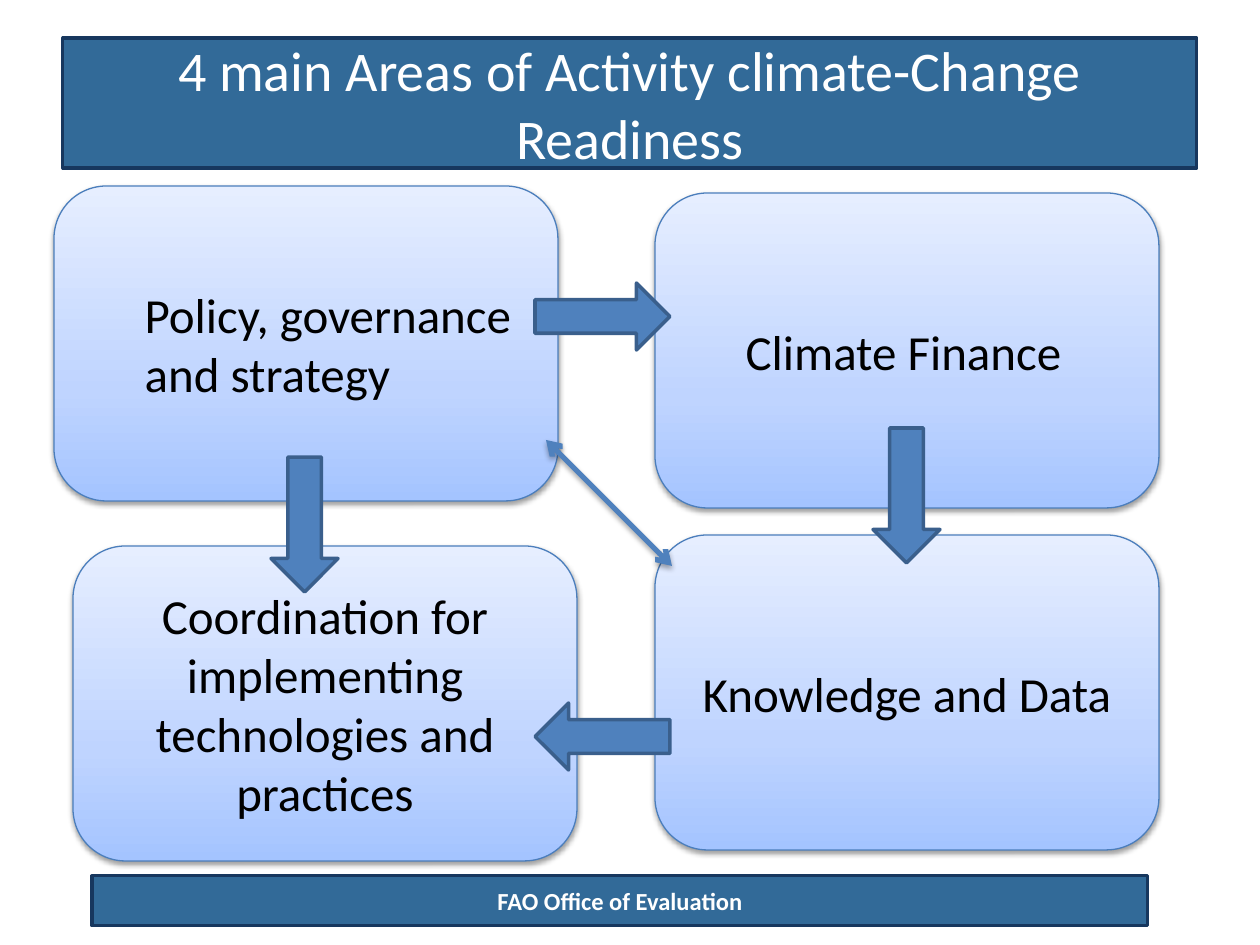
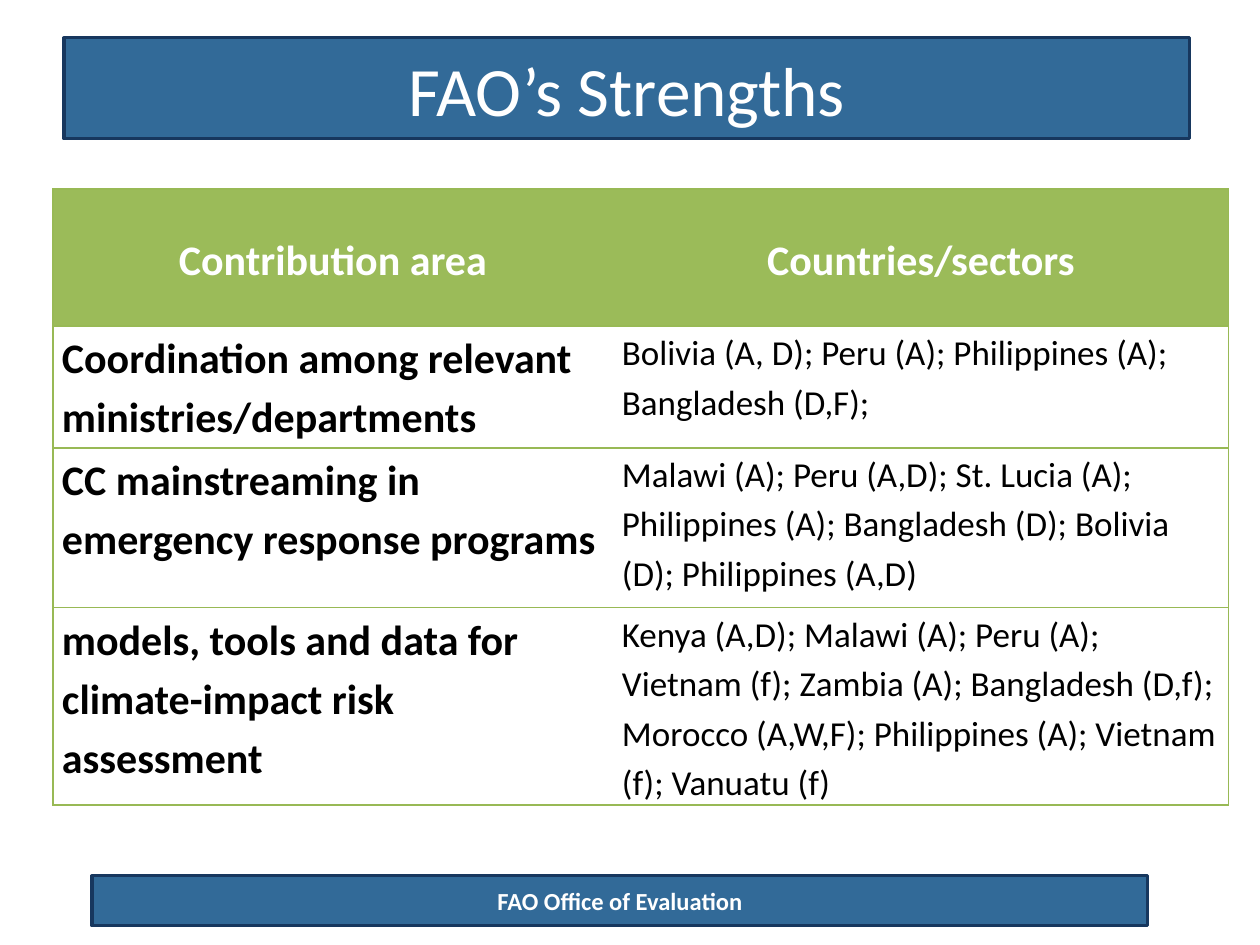
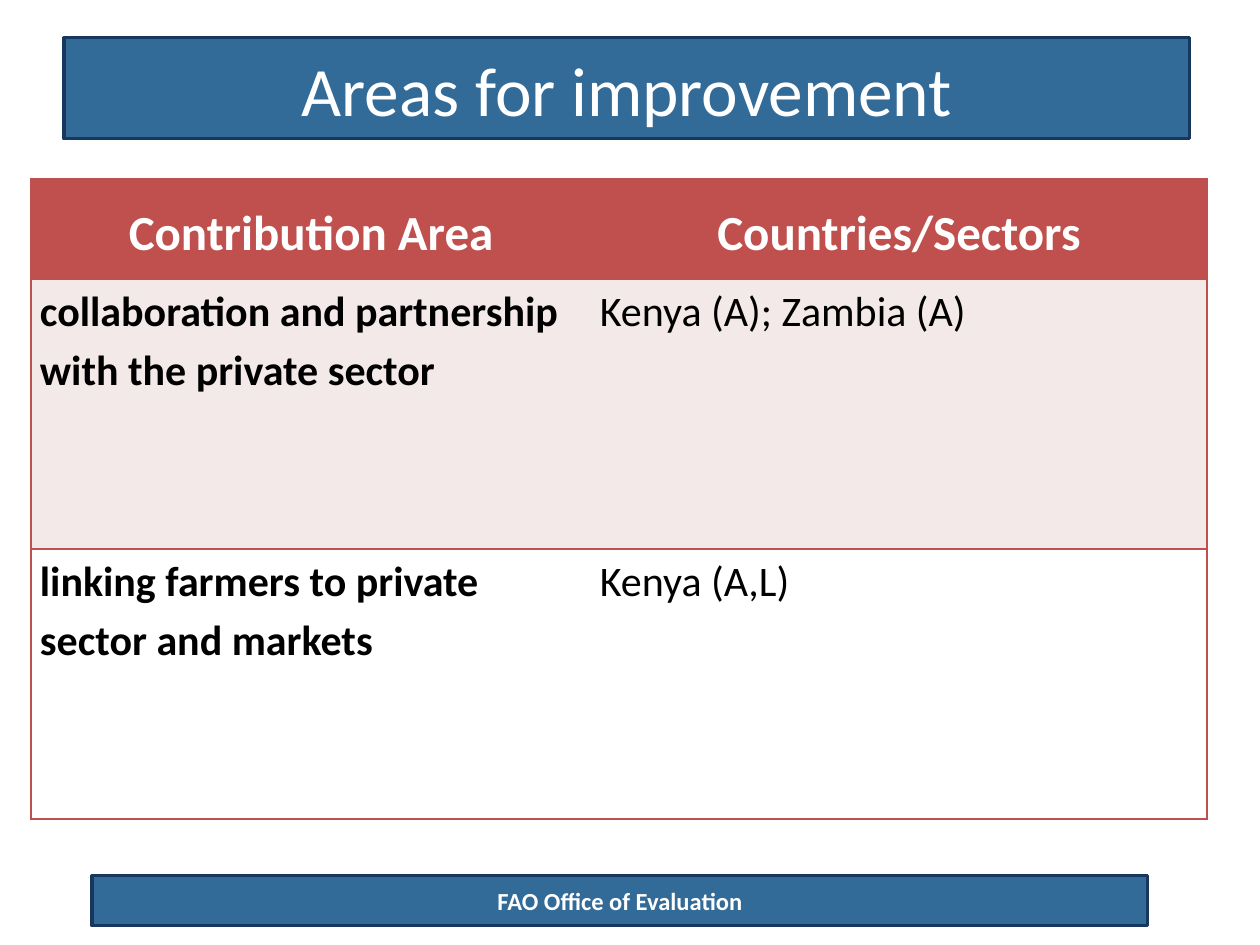
from collections import namedtuple
from dataclasses import dataclass

from pptx import Presentation
from pptx.dml.color import RGBColor
from pptx.enum.shapes import MSO_CONNECTOR as Connector, MSO_SHAPE as Preset
from pptx.enum.text import MSO_ANCHOR as Anchor, PP_ALIGN as Align
from pptx.oxml import parse_xml
from pptx.oxml.ns import nsdecls, qn
from pptx.util import Emu, Pt

Box = namedtuple("Box", "left top width height")


@dataclass(frozen=True)
class Theme:
    font: str = "Calibri"
    white: str = "FFFFFF"
    ink: str = "000000"
    band: str = "326A98"
    band_edge: str = "17375E"
    node_edge: str = "4B7EBC"
    node_stops: tuple = ((0, "A4C4FF"), (35, "BFD4FF"), (100, "E6EEFF"))
    arrow: str = "4F81BD"
    arrow_edge: str = "3A5F8C"
    green: str = "9BBB59"
    green_rule: str = "98B955"
    red: str = "C0504D"
    pink: str = "F4E9E9"
    title_size: float = 39.6
    long_title_size: int = 32
    large_size: int = 28
    medium_size: int = 24
    small_size: int = 20
    footer_size: int = 14


THEME = Theme()
TITLE_BOX = Box(64, 38, 1126, 101)
TALL_TITLE_BOX = Box(63, 38, 1134, 130)
FOOTER_BOX = Box(92, 876, 1056, 50)
NO_GRID_STYLE = "{2D5ABB26-0587-4C30-8999-92F81FD0307C}"


def px(length):
    return Emu(round(length * 914400 / 126))


def rgb(code):
    return RGBColor.from_string(code)


def write(frame, text, size, color, bold=False, align=Align.CENTER):
    frame.word_wrap = True
    paragraph = frame.paragraphs[0]
    paragraph.text = text
    paragraph.alignment = align
    font = paragraph.font
    font.name, font.size, font.bold = THEME.font, Pt(size), bold
    font.color.rgb = rgb(color)
    return paragraph


def add_outlined(slide, preset, box, fill, edge, weight):
    shape = slide.shapes.add_shape(preset, *map(px, box))
    shape.shadow.inherit = False
    shape.fill.solid()
    shape.fill.fore_color.rgb = rgb(fill)
    shape.line.color.rgb = rgb(edge)
    shape.line.width = Pt(weight)
    return shape


def add_band(slide, box, text, size, bold=False):
    band = add_outlined(slide, Preset.RECTANGLE, box, THEME.band, THEME.band_edge, 1.75)
    band.text_frame.vertical_anchor = Anchor.MIDDLE
    write(band.text_frame, text, size, THEME.white, bold)


def add_footer(slide):
    add_band(slide, FOOTER_BOX, "FAO Office of Evaluation", THEME.footer_size, True)


def cast_shadow(properties, distance, opacity):
    for effects in properties.findall(qn("a:effectLst")):
        properties.remove(effects)
    properties.append(parse_xml(
        f'<a:effectLst {nsdecls("a")}><a:outerShdw blurRad="40000" dist="{distance}" '
        'dir="5400000" rotWithShape="0"><a:srgbClr val="000000">'
        f'<a:alpha val="{opacity * 1000}"/></a:srgbClr></a:outerShdw></a:effectLst>'))


def shade(properties, stops):
    marks = "".join(f'<a:gs pos="{place * 1000}"><a:srgbClr val="{code}"/></a:gs>'
                    for place, code in stops)
    properties.replace(properties.find(qn("a:solidFill")), parse_xml(
        f'<a:gradFill {nsdecls("a")} rotWithShape="1"><a:gsLst>{marks}</a:gsLst>'
        '<a:lin ang="16200000" scaled="0"/></a:gradFill>'))


def add_node(slide, box, text, align):
    node = add_outlined(slide, Preset.ROUNDED_RECTANGLE, box, THEME.white, THEME.node_edge, 0.75)
    properties = node.element.spPr
    shade(properties, THEME.node_stops)
    cast_shadow(properties, 20000, 38)
    node.text_frame.vertical_anchor = Anchor.MIDDLE
    paragraph = write(node.text_frame, text, THEME.large_size, THEME.ink, align=align)
    if align == Align.LEFT:
        paragraph._p.get_or_add_pPr().set("marL", str(px(63)))


def add_two_way_link(slide, start, end):
    link = slide.shapes.add_connector(Connector.STRAIGHT, *map(px, start + end))
    link.line.color.rgb = rgb(THEME.arrow)
    link.line.width = Pt(3)
    stroke = link.line._get_or_add_ln()
    for tip in ("headEnd", "tailEnd"):
        stroke.append(parse_xml(f'<a:{tip} {nsdecls("a")} type="arrow"/>'))
    cast_shadow(link._element.spPr, 23000, 35)


def add_activity_cycle(slide, box):
    areas = (
        (0, 0, "Policy, governance and strategy", Align.LEFT),
        (601, 7, "Climate Finance", Align.LEFT),
        (601, 349, "Knowledge and Data", Align.CENTER),
        (19, 360, "Coordination for implementing technologies and practices", Align.CENTER),
    )
    for x, y, text, align in areas:
        add_node(slide, Box(box.left + x, box.top + y, 504, 315), text, align)
    for x, y, turn in ((481, 97, 0), (785, 276, 90), (481, 517, 180), (183, 305, 90)):
        step = add_outlined(slide, Preset.RIGHT_ARROW, Box(box.left + x, box.top + y, 135, 67),
                            THEME.arrow, THEME.arrow_edge, 2)
        step.rotation = turn
    add_two_way_link(slide, (box.left + 492, box.top + 254), (box.left + 618, box.top + 380))


def rule_cell(cell, sides, color, weight):
    properties = cell._tc.get_or_add_tcPr()
    for place, side in enumerate(sides):
        properties.insert(place, parse_xml(
            f'<a:{side} {nsdecls("a")} w="{Pt(weight)}"><a:solidFill>'
            f'<a:srgbClr val="{color}"/></a:solidFill></a:{side}>'))


def add_contributions(slide, box, rows, heights, fills, rule, weight, header_size, detail_size):
    grid = slide.shapes.add_table(len(rows), 2, *map(px, box)).table
    grid._tbl.tblPr.find(qn("a:tableStyleId")).text = NO_GRID_STYLE
    grid.horz_banding = False
    for column, width in zip(grid.columns, (560, box.width - 560)):
        column.width = px(width)
    for r, (texts, height, fill) in enumerate(zip(rows, heights, fills)):
        grid.rows[r].height = px(height)
        header = r == 0
        for c, text in enumerate(texts):
            cell = grid.cell(r, c)
            cell.margin_left = cell.margin_right = px(9)
            cell.margin_top = cell.margin_bottom = 0
            cell.vertical_anchor = Anchor.MIDDLE if header else Anchor.TOP
            cell.fill.solid()
            cell.fill.fore_color.rgb = rgb(fill)
            size = header_size if header else (THEME.medium_size, detail_size)[c]
            paragraph = write(cell.text_frame, text, size,
                              THEME.white if header else THEME.ink,
                              header or c == 0, Align.CENTER if header else Align.LEFT)
            paragraph.line_spacing = 1.15
            rule_cell(cell, (("lnL", "lnR")[c], "lnT", "lnB"), rule, weight)


def build_activity_slide(slide):
    add_footer(slide)
    add_activity_cycle(slide, Box(54, 186, 1105, 675))
    add_band(slide, TALL_TITLE_BOX, "4 main Areas of Activity climate-Change Readiness",
             THEME.long_title_size)


def build_contribution_slide(slide, title, box, **contributions):
    add_footer(slide)
    add_band(slide, TITLE_BOX, title, THEME.title_size)
    add_contributions(slide, box, **contributions)


def main():
    deck = Presentation()
    deck.slide_width, deck.slide_height = px(1260), px(945)
    activity, strengths, improvement = (
        deck.slides.add_slide(deck.slide_layouts[6]) for _ in range(3))
    build_activity_slide(activity)
    build_contribution_slide(
        strengths, "FAO’s Strengths", Box(53, 189, 1176, 604),
        rows=(
            ("Contribution area", "Countries/sectors"),
            ("Coordination among relevant ministries/departments",
             "Bolivia (A, D); Peru (A); Philippines (A); Bangladesh (D,F);"),
            ("CC mainstreaming in emergency response programs",
             "Malawi (A); Peru (A,D); St. Lucia (A); Philippines (A); Bangladesh (D); "
             "Bolivia (D); Philippines (A,D)"),
            ("models, tools and data for climate-impact risk assessment",
             "Kenya (A,D); Malawi (A); Peru (A); Vietnam (f); Zambia (A); Bangladesh (D,f); "
             "Morocco (A,W,F); Philippines (A); Vietnam (f); Vanuatu (f)"),
        ),
        heights=(137, 122, 160, 185), fills=(THEME.green,) + (THEME.white,) * 3,
        rule=THEME.green_rule, weight=0.75,
        header_size=THEME.medium_size, detail_size=THEME.small_size)
    build_contribution_slide(
        improvement, "Areas for improvement", Box(31, 179, 1176, 640),
        rows=(
            ("Contribution Area", "Countries/Sectors"),
            ("collaboration and partnership with the private sector", "Kenya (A); Zambia (A)"),
            ("linking farmers to private sector and markets", "Kenya (A,L)"),
        ),
        heights=(100, 270, 270), fills=(THEME.red, THEME.pink, THEME.white),
        rule=THEME.red, weight=1,
        header_size=THEME.large_size, detail_size=THEME.medium_size)
    deck.save("out.pptx")


if __name__ == "__main__":
    main()
